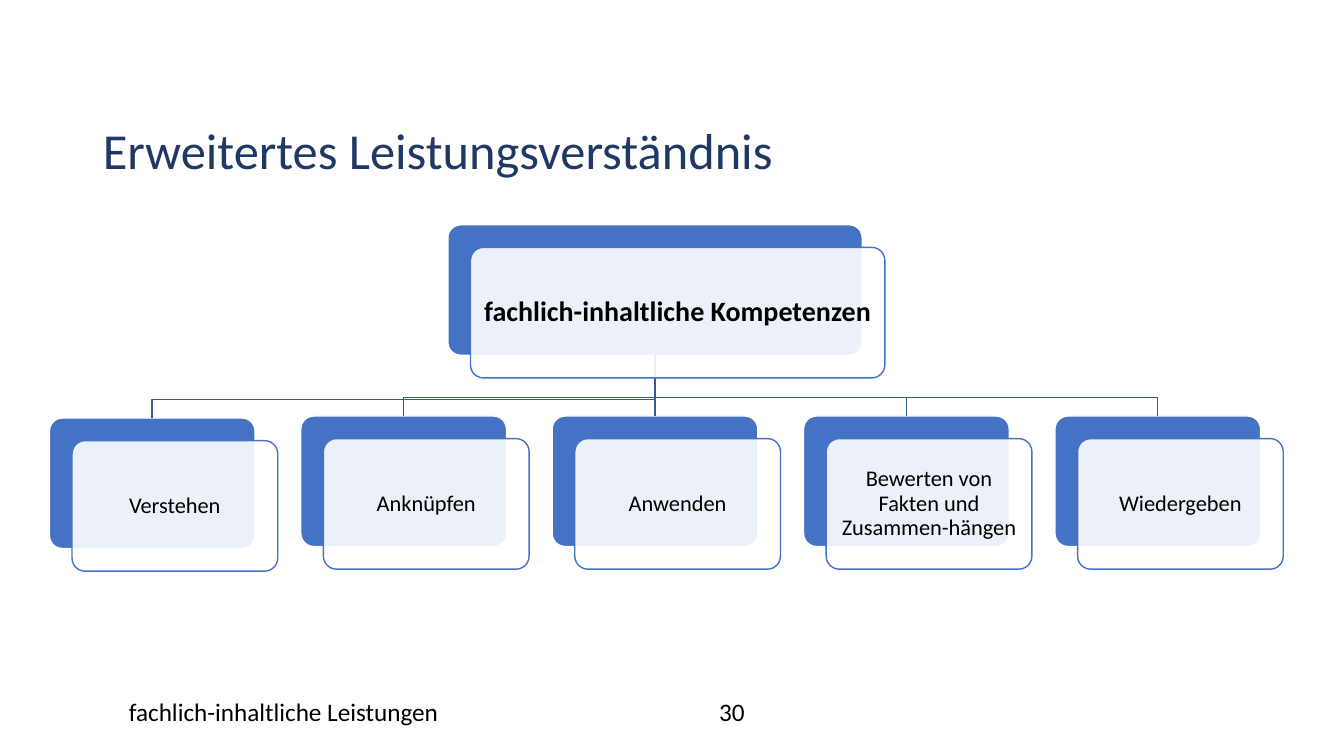
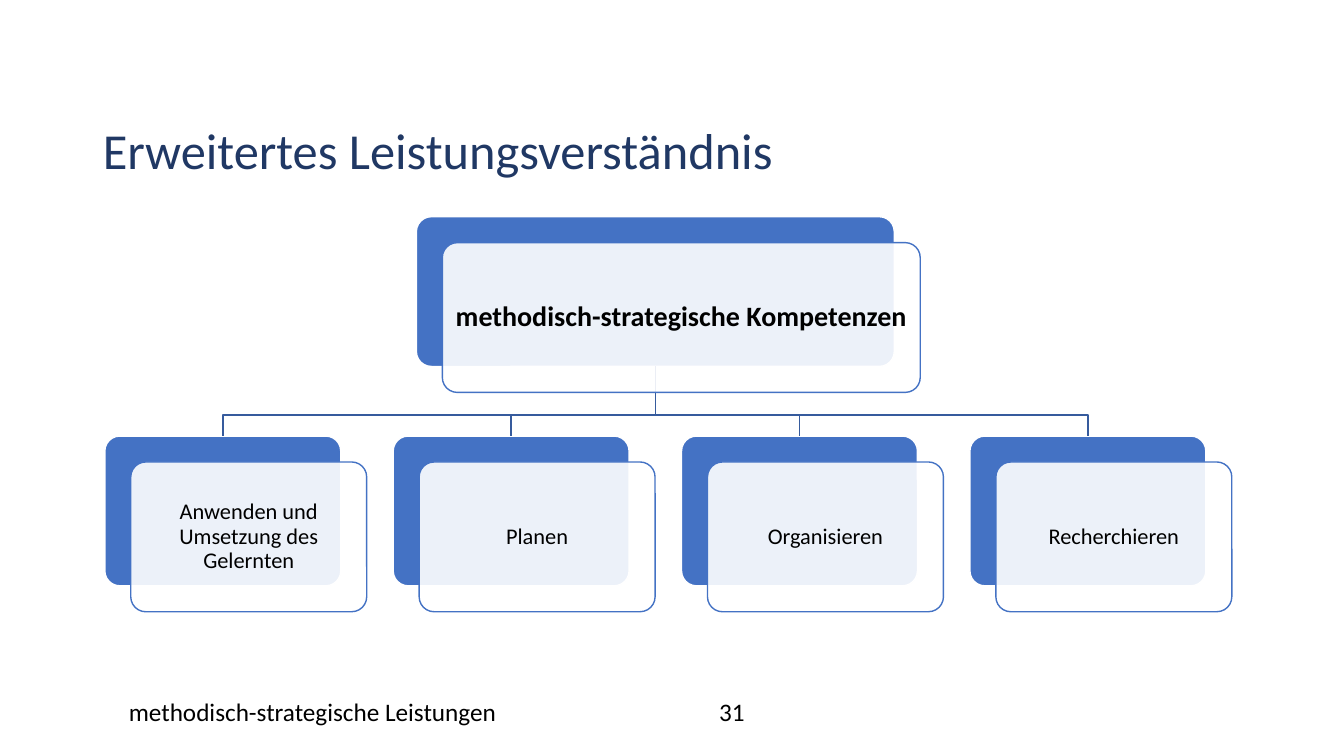
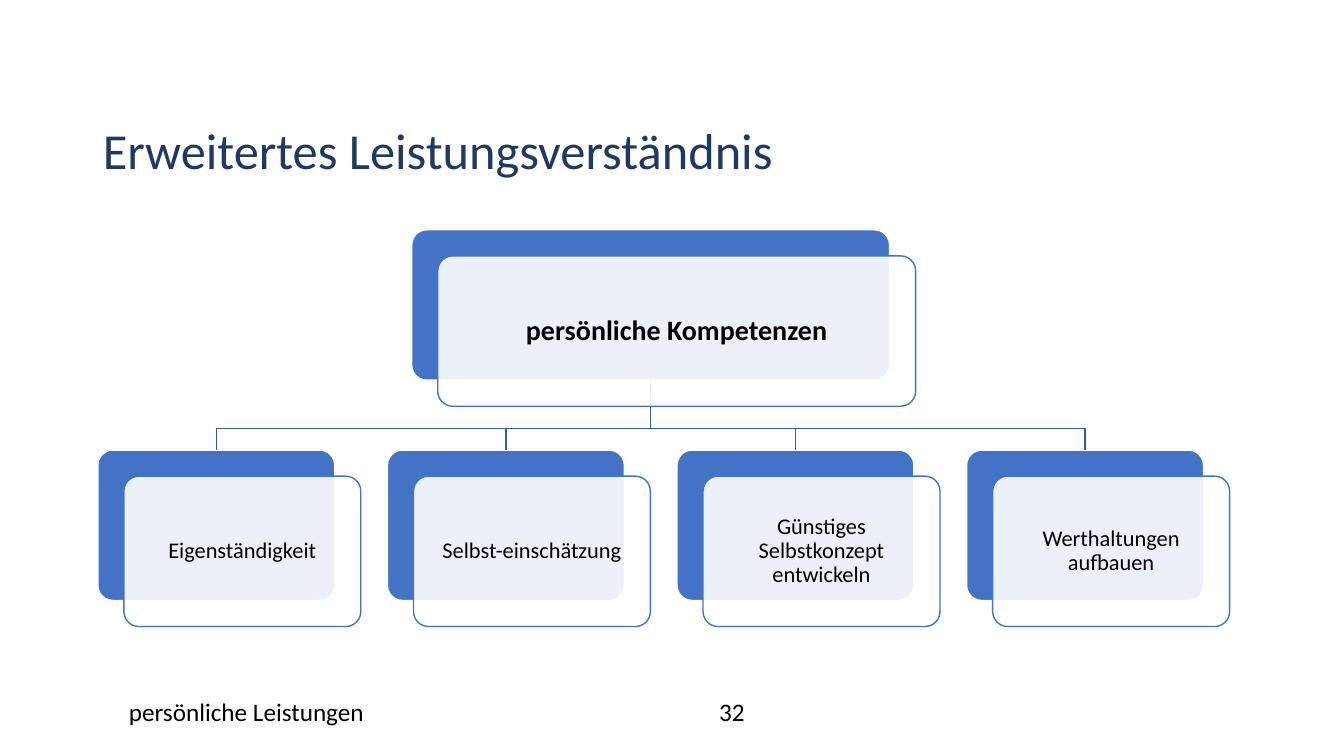
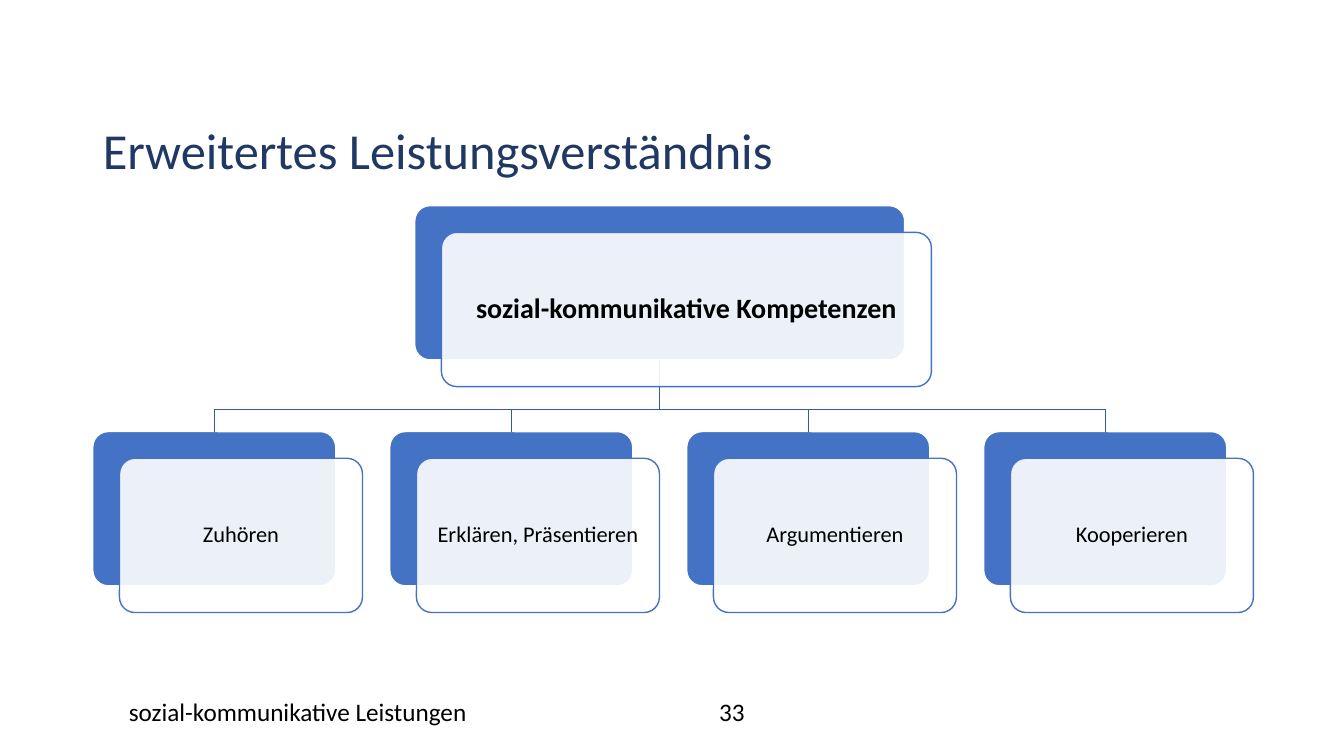
from dataclasses import dataclass

from pptx import Presentation
from pptx import util as u
from pptx.dml.color import RGBColor
from pptx.enum import shapes, text
from pptx.oxml.ns import qn
from lxml import etree

COLORS = {
    "title": "203864",
    "text": "000000",
    "block": "4472C4",
    "card": "FFFFFF",
    "branch": "365B9D",
}
FONT = "Calibri"
TITLE = "Erweitertes Leistungsverständnis"
TITLE_BOX = (0.92, 1.2, 11.5, 0.97)
FOOTER_BOX = (1.18, 6.86, 4.5, 0.4)
NUMBER_BOX = (5.76, 6.86, 3, 0.4)
FIRST_NUMBER = 30

# Proportions of the chart, as shares of a child block's width
HEIGHT = 0.635
STEP = 11 / 9
CARD_SHIFT = (0.11, 0.11)
ROW_SHIFT = 0.93
BUS_RISE = 0.09


@dataclass
class Chart:
    name: str
    left: float
    top: float
    block_width: float
    root_width: float
    children: list
    first_drop: float = 0


CHARTS = [
    Chart("fachlich-inhaltliche", 0.49, 2.23, 2.04, 4.11,
          ["Verstehen", "Anknüpfen", "Anwenden",
           "Bewerten von Fakten und Zusammen-hängen", "Wiedergeben"],
          first_drop=0.02),
    Chart("methodisch-strategische", 1.04, 2.15, 2.34, 4.74,
          ["Anwenden und Umsetzung des Gelernten", "Planen",
           "Organisieren", "Recherchieren"]),
    Chart("persönliche", 0.97, 2.28, 2.35, 4.74,
          ["Eigenständigkeit", "Selbst-einschätzung",
           "Günstiges Selbstkonzept entwickeln", "Werthaltungen aufbauen"]),
    Chart("sozial-kommunikative", 0.92, 2.04, 2.41, 4.86,
          ["Zuhören", "Erklären, Präsentieren", "Argumentieren", "Kooperieren"]),
]


def color(name):
    return RGBColor.from_string(COLORS[name])


def inches(values):
    return [u.Inches(value) for value in values]


def write(shape, words, size, ink="text", align="LEFT", spacing=None, bold=False, **frame):
    """Put one formatted paragraph into a shape; frame holds text frame values."""
    text_frame = shape.text_frame
    text_frame.text = words
    for key, value in {"word_wrap": True, **frame}.items():
        setattr(text_frame, key, value)
    paragraph = text_frame.paragraphs[0]
    paragraph.alignment = getattr(text.PP_ALIGN, align)
    paragraph.line_spacing = spacing
    font = paragraph.runs[0].font
    for key, value in {"name": FONT, "size": u.Pt(size), "bold": bold}.items():
        setattr(font, key, value)
    font.color.rgb = color(ink)


def set_line(shape, ink):
    shape.line.color.rgb = color(ink)
    shape.line.width = u.Pt(1)


def add_rounded(slide, box, fill, line):
    shape = slide.shapes.add_shape(shapes.MSO_SHAPE.ROUNDED_RECTANGLE, *inches(box))
    shape.adjustments[0] = 0.1
    shape.shadow.inherit = False
    shape.fill.solid()
    shape.fill.fore_color.rgb = color(fill)
    set_line(shape, line)
    return shape


def add_card(slide, block_box, unit, words, size, margin, bold=False):
    """Add the translucent label card, shifted from the block behind it."""
    left, top, width, height = block_box
    shift_x, shift_y = CARD_SHIFT
    box = (left + shift_x * unit, top + shift_y * unit, width, height)
    card = add_rounded(slide, box, "card", "block")
    fill = card.fill._xPr.find(qn("a:solidFill"))
    etree.SubElement(fill[0], qn("a:alpha"), val="90000")
    margins = {f"margin_{side}": u.Inches(margin)
               for side in ("left", "top", "right", "bottom")}
    write(card, words, size, align="CENTER", spacing=0.9, bold=bold,
          vertical_anchor=text.MSO_ANCHOR.MIDDLE, **margins)


def add_branch(slide, root, child, rise):
    """Join the root's bottom to the child's top, bending above the child."""
    start_x, start_y = root.left + root.width // 2, root.top + root.height
    end_x, end_y = child.left + child.width // 2, child.top
    if abs(start_x - end_x) < u.Inches(0.02):
        branch = slide.shapes.add_connector(
            shapes.MSO_CONNECTOR.STRAIGHT, start_x, start_y, end_x, end_y)
        branch.begin_connect(root, 2)
        branch.end_connect(child, 0)
        set_line(branch, "branch")
        etree.SubElement(branch._element.spPr, qn("a:effectLst"))
        return
    bus_y = end_y - u.Inches(rise)
    builder = slide.shapes.build_freeform(start_x, start_y)
    builder.add_line_segments(
        [(start_x, bus_y), (end_x, bus_y), (end_x, end_y)], close=False)
    branch = builder.convert_to_shape()
    branch.shadow.inherit = False
    branch.fill.background()
    set_line(branch, "branch")


def add_hierarchy(slide, chart):
    unit = chart.block_width
    height = HEIGHT * unit
    step = STEP * unit
    row_width = step * (len(chart.children) - 1) + unit
    root_left = chart.left + (row_width - chart.root_width) / 2
    root_box = (root_left, chart.top, chart.root_width, height)
    row_top = chart.top + ROW_SHIFT * unit
    child_boxes = [
        (chart.left + index * step, row_top + (0 if index else chart.first_drop), unit, height)
        for index in range(len(chart.children))]

    root, *blocks = [add_rounded(slide, box, "block", "card")
                     for box in [root_box, *child_boxes]]
    for block in reversed(blocks):
        add_branch(slide, root, block, BUS_RISE * unit)
    add_card(slide, root_box, unit, f"{chart.name} Kompetenzen", 20, 0.08, bold=True)
    for box, words in zip(child_boxes, chart.children):
        add_card(slide, box, unit, words, 16, 0.07)


def add_title(slide):
    write(slide.shapes.title, TITLE, 36, ink="title", spacing=0.9,
          vertical_anchor=text.MSO_ANCHOR.TOP, auto_size=text.MSO_AUTO_SIZE.NONE)


def add_footer(slide, words, number):
    for box, content, align in ((FOOTER_BOX, words, "LEFT"),
                                (NUMBER_BOX, str(number), "CENTER")):
        write(slide.shapes.add_textbox(*inches(box)), content, 18, align=align)


def main():
    presentation = Presentation()
    presentation.slide_width, presentation.slide_height = inches((13.33, 7.5))
    layout = presentation.slide_layouts.get_by_name("Title Only")
    title = layout.placeholders[0]
    title.left, title.top, title.width, title.height = inches(TITLE_BOX)
    for number, chart in enumerate(CHARTS, FIRST_NUMBER):
        slide = presentation.slides.add_slide(layout)
        add_title(slide)
        add_footer(slide, f"{chart.name} Leistungen", number)
        add_hierarchy(slide, chart)
    presentation.save("out.pptx")


if __name__ == "__main__":
    main()
